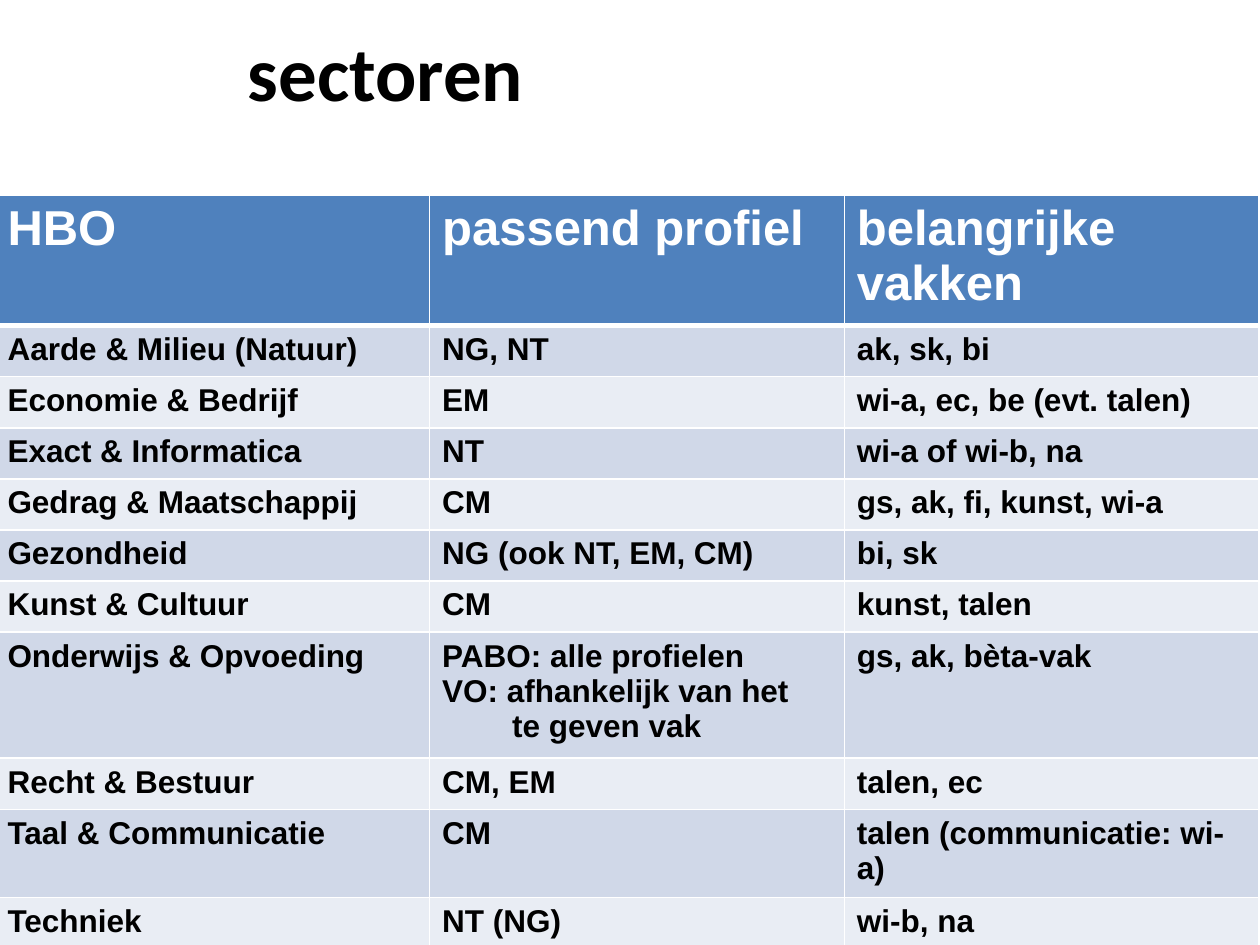
from dataclasses import dataclass

from pptx import Presentation
from pptx.dml.color import RGBColor
from pptx.enum.text import MSO_ANCHOR, PP_ALIGN
from pptx.oxml import parse_xml
from pptx.oxml.ns import nsdecls
from pptx.util import Pt


@dataclass(frozen=True)
class Theme:
    title_font: str = "Calibri"
    body_font: str = "Arial"
    title_size: int = 44
    header_size: int = 28
    body_size: int = 18
    text: str = "000000"
    header_text: str = "FFFFFF"
    header_fill: str = "4F81BD"
    bands: tuple = ("D0D8E8", "E9EDF4")
    border: str = "FFFFFF"


THEME = Theme()

HEADER = ("HBO", "passend profiel", "belangrijke vakken")
SECTORS = (
    ("Aarde & Milieu (Natuur)", "NG, NT", "ak, sk, bi"),
    ("Economie & Bedrijf", "EM", "wi-a, ec, be (evt. talen)"),
    ("Exact & Informatica", "NT", "wi-a of wi-b, na"),
    ("Gedrag & Maatschappij", "CM", "gs, ak, fi, kunst, wi-a"),
    ("Gezondheid", "NG (ook NT, EM, CM)", "bi, sk"),
    ("Kunst & Cultuur", "CM", "kunst, talen"),
    ("Onderwijs & Opvoeding",
     "PABO: alle profielen\nVO: afhankelijk van het\n\tte geven vak",
     "gs, ak, bèta-vak"),
    ("Recht & Bestuur", "CM, EM", "talen, ec"),
    ("Taal & Communicatie", "CM", "talen (communicatie: wi-a)"),
    ("Techniek", "NT (NG)", "wi-b, na"),
)
COL_WIDTHS = (248.4, 237, 237)
HEADER_HEIGHT, ROW_HEIGHT, TALL_HEIGHT = 54, 29.2, 72
INDENT = 40


def add_run(p, text, font, size, color):
    r = p.add_run()
    r.text = text
    r.font.name = font
    r.font.size = Pt(size)
    r.font.bold = True
    r.font.color.rgb = RGBColor.from_string(color)


def set_borders(cell, **widths):
    """Draw the cell's sides, 1 pt wide unless a side (L, R, T, B) is given."""
    tc_pr = cell._tc.get_or_add_tcPr()
    for side in "LRTB":
        tc_pr.append(parse_xml(
            f'<a:ln{side} {nsdecls("a")} w="{Pt(widths.get(side, 1))}">'
            f'<a:solidFill><a:srgbClr val="{THEME.border}"/></a:solidFill>'
            f'</a:ln{side}>'))


def fill_cell(cell, text, size, color, fill):
    """Write one paragraph per line; a leading tab indents the paragraph."""
    cell.fill.solid()
    cell.fill.fore_color.rgb = RGBColor.from_string(fill)
    tf = cell.text_frame
    for i, line in enumerate(text.split("\n")):
        p = tf.add_paragraph() if i else tf.paragraphs[0]
        if line.startswith("\t"):
            p._p.get_or_add_pPr().set("marL", str(Pt(INDENT)))
        add_run(p, line.strip(), THEME.body_font, size, color)


def add_title(slide, text, left, top, width, height):
    tf = slide.shapes.add_textbox(Pt(left), Pt(top), Pt(width), Pt(height)).text_frame
    tf.word_wrap = True
    tf.vertical_anchor = MSO_ANCHOR.MIDDLE
    p = tf.paragraphs[0]
    p.alignment = PP_ALIGN.CENTER
    add_run(p, text, THEME.title_font, THEME.title_size, THEME.text)


def add_sector_table(slide, left, top, width, height):
    rows = (HEADER, *SECTORS)
    table = slide.shapes.add_table(len(rows), len(HEADER), Pt(left), Pt(top),
                                   Pt(width), Pt(height)).table
    for column, col_width in zip(table.columns, COL_WIDTHS):
        column.width = Pt(col_width)
    for i, texts in enumerate(rows):
        tall = any("\n" in text for text in texts)
        row_height = TALL_HEIGHT if tall else ROW_HEIGHT
        table.rows[i].height = Pt(row_height if i else HEADER_HEIGHT)
        for cell, text in zip(table.rows[i].cells, texts):
            set_borders(cell, T=3 if i == 1 else 1, B=1 if i else 3)
            if i:
                fill_cell(cell, text, THEME.body_size, THEME.text,
                          THEME.bands[(i - 1) % 2])
            else:
                fill_cell(cell, text, THEME.header_size, THEME.header_text,
                          THEME.header_fill)


def main():
    prs = Presentation()
    prs.slide_width, prs.slide_height = Pt(720), Pt(540)
    slide = prs.slides.add_slide(prs.slide_layouts[6])
    add_title(slide, "sectoren", 42.5, 13, 355.7, 54.7)
    add_sector_table(slide, -2.9, 111.6, sum(COL_WIDTHS), 388.8)
    prs.save("out.pptx")


if __name__ == "__main__":
    main()
